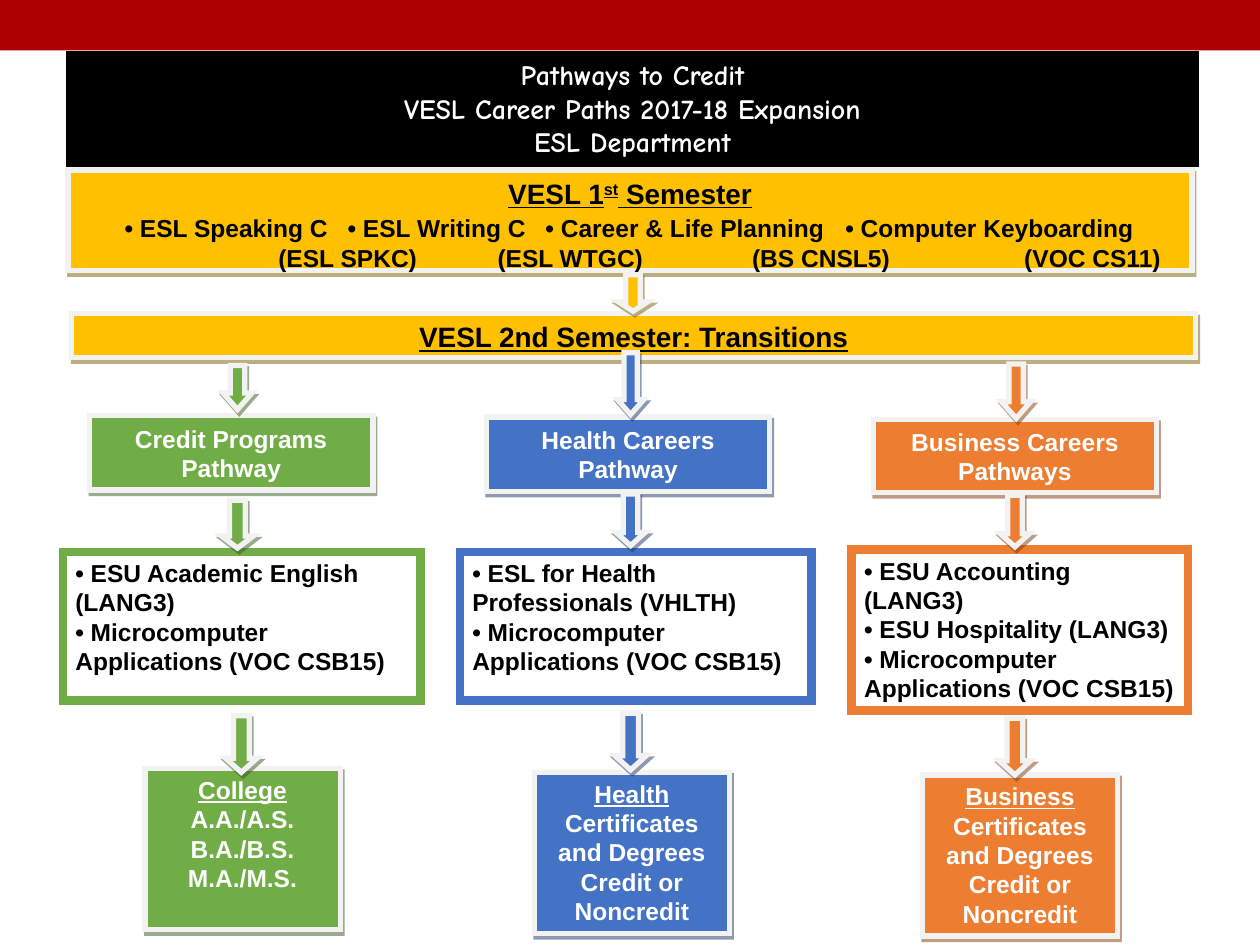
from pptx import Presentation
from pptx.dml.color import RGBColor
from pptx.enum.shapes import MSO_SHAPE as Shape
from pptx.enum.text import MSO_ANCHOR as Anchor, PP_ALIGN as Align
from pptx.oxml.ns import qn
from pptx.util import Inches, Pt
from lxml.etree import SubElement

COLORS = {
    "banner": "AD0101", "black": "000000", "white": "FFFFFF", "frame": "F2F2F2",
    "gold": "FFC000", "green": "70AD47", "blue": "4472C4", "orange": "ED7D31",
}
SHADOWS = {"gold": "7F5F00", "green": "375623", "blue": "1F3763", "orange": "823B0B"}


class PathwayChart:
    font = "Arial"

    def __init__(self, slide):
        self.slide = slide

    def color(self, name):
        return RGBColor.from_string(COLORS[name])

    def block(self, kind, place, fill, line=None, width=0):
        shape = self.slide.shapes.add_shape(kind, *map(Inches, place))
        shape.shadow.inherit = False
        shape.fill.solid()
        shape.fill.fore_color.rgb = self.color(fill)
        if line:
            shape.line.color.rgb = self.color(line)
            shape.line.width = Pt(width)
            SubElement(shape.line._ln, qn("a:miter"), lim="800000")
        else:
            shape.line.fill.background()
        return shape

    def raised(self, kind, place, fill):
        shape = self.block(kind, place, fill, "frame", 3)
        effects = shape._element.spPr.find(qn("a:effectLst"))
        shadow = SubElement(effects, qn("a:outerShdw"), dist=str(Pt(2.2)),
                            dir=str(63 * 60000), algn="ctr", rotWithShape="0")
        tint = SubElement(shadow, qn("a:srgbClr"), val=SHADOWS[fill])
        SubElement(tint, qn("a:alpha"), val="50000")
        return shape

    def arrow(self, place, fill, head):
        shape = self.raised(Shape.DOWN_ARROW, place, fill)
        shape.adjustments[0] = 0.5
        shape.adjustments[1] = head

    def label(self, shape, lines, color, size=14, align=Align.CENTER,
              anchor=Anchor.TOP, font=None):
        frame = shape.text_frame
        frame.word_wrap = True
        frame.vertical_anchor = anchor
        for index, line in enumerate(lines):
            paragraph = frame.paragraphs[0] if index == 0 else frame.add_paragraph()
            paragraph.text = line
            self.style(paragraph, color, size, align, font)

    def style(self, paragraph, color, size, align, font=None):
        paragraph.alignment = align
        paragraph.font.name = font or self.font
        paragraph.font.size = Pt(size)
        paragraph.font.bold = True
        paragraph.font.color.rgb = self.color(color)

    def underline(self, paragraph):
        for run in paragraph.runs:
            run.font.underline = True

    def tabbed(self, frame, entries, stops):
        paragraph = frame.add_paragraph()
        tabs = SubElement(paragraph._p.get_or_add_pPr(), qn("a:tabLst"))
        for stop in stops:
            SubElement(tabs, qn("a:tab"), pos=str(Inches(stop)), algn="l")
        paragraph.text = "".join("\t" + entry for entry in entries)
        self.style(paragraph, "black", 14, Align.LEFT)

    def first_semester(self, place, courses):
        frame = self.raised(Shape.RECTANGLE, place, "gold").text_frame
        frame.word_wrap = True
        frame.vertical_anchor = Anchor.TOP
        heading = frame.paragraphs[0]
        for text in ("VESL 1", "st", " Semester"):
            heading.add_run().text = text
        heading.runs[1]._r.get_or_add_rPr().set("baseline", "30000")
        heading.space_after = Pt(2)
        self.style(heading, "black", 16, Align.CENTER)
        self.underline(heading)
        names, codes, name_stops, code_stops = zip(*courses)
        self.tabbed(frame, [f"• {name}" for name in names], name_stops)
        self.tabbed(frame, [f"({code})" for code in codes], code_stops)

    def second_semester(self, place, heading):
        bar = self.raised(Shape.RECTANGLE, place, "gold")
        self.label(bar, [heading], "black", 16)
        self.underline(bar.text_frame.paragraphs[0])

    def pathway(self, place, fill, name):
        box = self.raised(Shape.RECTANGLE, place, fill)
        self.label(box, [name], "white", anchor=Anchor.MIDDLE)

    def courses(self, place, line, names):
        box = self.block(Shape.RECTANGLE, place, "white", line, 5)
        self.label(box, [f"• {name}" for name in names], "black", align=Align.LEFT)

    def outcome(self, place, fill, heading, lines):
        box = self.raised(Shape.RECTANGLE, place, fill)
        self.label(box, [heading, *lines], "white")
        self.underline(box.text_frame.paragraphs[0])


def main():
    deck = Presentation()
    deck.slide_width, deck.slide_height = Inches(10), Inches(7.5)
    chart = PathwayChart(deck.slides.add_slide(deck.slide_layouts[6]))

    chart.block(Shape.RECTANGLE, (0, 0, 10, 0.4), "banner")
    title = chart.block(Shape.RECTANGLE, (0.53, 0.41, 8.98, 0.91), "black", "black", 0.75)
    chart.label(title, ["Pathways to Credit", "VESL Career Paths 2017-18 Expansion",
                        "ESL Department"], "white", 16, font="Comic Neue")
    chart.first_semester((0.54, 1.35, 8.92, 0.8), [
        ("ESL Speaking C", "ESL SPKC", 0.35, 1.57),
        ("ESL Writing C", "ESL WTGC", 2.12, 3.31),
        ("Career & Life Planning", "BS CNSL5", 3.69, 5.33),
        ("Computer Keyboarding", "VOC CS11", 6.07, 7.49),
    ])
    chart.second_semester((0.57, 2.49, 8.92, 0.35), "VESL 2nd Semester: Transitions")
    chart.arrow((4.91, 2.18, 0.23, 0.29), "gold", 0.32)

    microcomputer = "Microcomputer Applications (VOC CSB15)"
    degrees = ["Certificates and Degrees", "Credit or Noncredit"]
    pathways = [
        ("green", "Credit Programs Pathway", (0.71, 3.3, 2.25, 0.59),
         ["ESU Academic English (LANG3)", microcomputer], (0.5, 4.38, 2.84, 1.18),
         "College", ["A.A./A.S.", "B.A./B.S.", "M.A./M.S."], (1.15, 6.1),
         [(1.77, 2.9, 0.23, 0.35, 0.57), (1.76, 3.97, 0.25, 0.38, 0.38),
          (1.79, 5.68, 0.25, 0.45, 0.45)]),
        ("blue", "Health Careers Pathway", (3.86, 3.31, 2.25, 0.59),
         ["ESL for Health Professionals (VHLTH)", microcomputer], (3.65, 4.38, 2.79, 1.18),
         "Health", degrees, (4.24, 6.13),
         [(4.9, 2.8, 0.21, 0.49, 0.57), (4.89, 3.92, 0.23, 0.41, 0.45),
          (4.88, 5.66, 0.25, 0.45, 0.45)]),
        ("orange", "Business Careers Pathways", (6.93, 3.33, 2.25, 0.58),
         ["ESU Accounting (LANG3)", "ESU Hospitality (LANG3)", microcomputer],
         (6.76, 4.36, 2.67, 1.28),
         "Business", degrees, (7.32, 6.15),
         [(7.95, 2.89, 0.23, 0.43, 0.57), (7.94, 3.93, 0.23, 0.41, 0.45),
          (7.93, 5.7, 0.25, 0.45, 0.45)]),
    ]
    for (hue, name, name_place, classes, class_place,
         goal, goal_lines, goal_corner, arrows) in pathways:
        chart.pathway(name_place, hue, name)
        chart.courses(class_place, hue, classes)
        chart.outcome((*goal_corner, 1.55, 1.28), hue, goal, goal_lines)
        for *place, head in arrows:
            chart.arrow(place, hue, head)

    deck.save("out.pptx")


if __name__ == "__main__":
    main()
